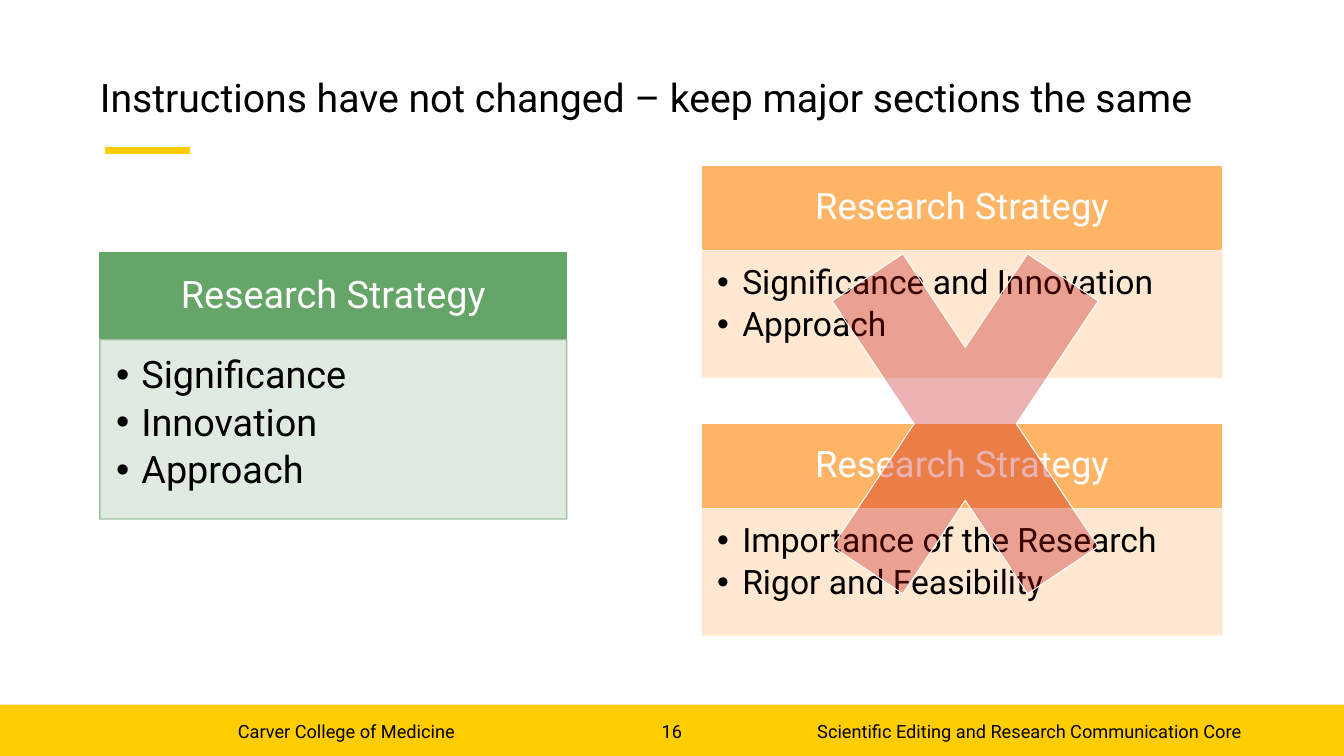
from dataclasses import dataclass

from lxml import etree
from pptx import Presentation
from pptx import util as u
from pptx.dml.color import RGBColor
from pptx.enum import shapes, text
from pptx.oxml import ns


@dataclass(frozen=True)
class Theme:
    font: str = "Roboto"
    gold: str = "FFCD00"
    ink: str = "000000"
    paper: str = "FFFFFF"
    green: str = "65A567"
    pale_green: str = "98BE9D"
    orange: str = "FFB466"
    pale_orange: str = "FFE6CC"
    red: str = "C00000"
    title: int = 28
    footer: int = 13
    head_large: int = 27
    list_large: int = 27
    head_small: int = 26
    list_small: int = 24


def apply(target, formats):
    for name, value in formats.items():
        setattr(target, name, value)


class Slide:
    def __init__(self, deck, theme, layout):
        self.theme = theme
        self.column = deck.slide_width / 100
        self.row = deck.slide_height / 100
        self.page = deck.slides.add_slide(deck.slide_layouts[layout])
        self.shapes = self.page.shapes
        self.bodies = [box for box in self.page.placeholders if box.placeholder_format.idx]

    def area(self, left, top, width, height):
        return [round(left * self.column), round(top * self.row),
                round(width * self.column), round(height * self.row)]

    def place(self, box, area):
        apply(box, dict(zip(("left", "top", "width", "height"), self.area(*area))))

    def paint(self, fill, color, opacity=100):
        fill.solid()
        fill.fore_color.rgb = RGBColor.from_string(color)
        if opacity < 100:
            tone = fill.fore_color._xFill.find(ns.qn("a:srgbClr"))
            etree.SubElement(tone, ns.qn("a:alpha"), val=str(opacity * 1000))

    def outline(self, box, color, width=1, opacity=100):
        self.paint(box.line.fill, color, opacity)
        box.line.width = u.Pt(width)

    def fill_text(self, box, lines, size, color=None, align="LEFT", anchor="MIDDLE",
                  insets=(0, 0, 0, 0), wrap=True, spacing=1.0, bullets=False):
        frame = box.text_frame
        apply(frame, {"auto_size": text.MSO_AUTO_SIZE.NONE, "word_wrap": wrap,
                      "vertical_anchor": text.MSO_ANCHOR[anchor]})
        sides = ("margin_left", "margin_top", "margin_right", "margin_bottom")
        apply(frame, {side: u.Pt(size * inset) for side, inset in zip(sides, insets)})
        for index, line in enumerate(lines):
            para = frame.add_paragraph() if index else frame.paragraphs[0]
            apply(para, {"alignment": text.PP_ALIGN[align], "line_spacing": spacing,
                         "space_before": u.Pt(0),
                         "space_after": u.Pt(size * 0.175 if bullets else 0)})
            if bullets:
                settings = para._p.get_or_add_pPr()
                settings.set("marL", str(u.Inches(0.25)))
                settings.set("indent", str(u.Inches(-0.25)))
                etree.SubElement(settings, ns.qn("a:buChar"), char="•")
            span = para.add_run()
            span.text = line
            apply(span.font, {"name": self.theme.font, "size": u.Pt(size), "bold": False})
            span.font.color.rgb = RGBColor.from_string(color or self.theme.ink)

    def title(self, area, words):
        box = self.shapes.title
        self.place(box, area)
        self.fill_text(box, [words], self.theme.title, spacing=0.9)

    def label(self, area, words, **formats):
        box = self.shapes.add_textbox(*self.area(*area))
        self.fill_text(box, [words], self.theme.footer, **formats)

    def block(self, area, color, preset="RECTANGLE", opacity=100):
        box = self.shapes.add_shape(shapes.MSO_SHAPE[preset], *self.area(*area))
        box.shadow.inherit = False
        self.paint(box.fill, color, opacity)
        box.line.fill.background()
        return box

    def rule(self, left, top, width, color, weight):
        x, y, length, _ = self.area(left, top, width, 0)
        line = self.shapes.add_connector(shapes.MSO_CONNECTOR.STRAIGHT, x, y, x + length, y)
        self.outline(line, color, weight)
        etree.SubElement(line._element.spPr, ns.qn("a:effectLst"))

    def card(self, left, top, width, heights, items, colors, sizes, opacity, edge):
        head_height, list_height = heights
        head_color, list_color = colors
        head_size, list_size = sizes
        head = self.block((left, top, width, head_height), head_color)
        self.outline(head, head_color)
        self.fill_text(head, ["Research Strategy"], head_size, self.theme.paper, "CENTER",
                       spacing=0.9)
        body = self.bodies.pop()
        self.place(body, (left, top + head_height + edge, width, list_height))
        self.paint(body.fill, list_color, opacity)
        self.outline(body, list_color, opacity=90)
        self.fill_text(body, items, list_size, anchor="TOP", insets=(0.43, 0.43, 0.56, 0.64),
                       spacing=0.9, bullets=True)

    def cross(self, area, thickness):
        box = self.block(area, self.theme.red, "MATH_MULTIPLY", 30)
        box.adjustments[0] = thickness
        self.outline(box, self.theme.paper, 0)

    def clear_unused(self):
        for box in self.bodies:
            box._element.getparent().remove(box._element)


def main():
    deck = Presentation()
    deck.slide_width, deck.slide_height = u.Inches(13.33), u.Inches(7.5)
    theme = Theme()
    slide = Slide(deck, theme, 4)

    slide.block((0, 93.2, 100, 6.8), theme.gold)
    slide.rule(7.8, 19.87, 6.3, theme.gold, 5)
    slide.label((47.55, 95.33, 4.88, 3.47), "16", align="CENTER", anchor="TOP")
    slide.label((17.7, 95.33, 23.7, 4.67), "Carver College of Medicine", anchor="TOP", wrap=False)
    slide.title((7.43, 6.67, 83.48, 13.07),
                "Instructions have not changed – keep major sections the same")

    slide.card(7.43, 33.47, 34.73, (11.33, 23.73), ["Significance", "Innovation", "Approach"],
               (theme.green, theme.pale_green), (theme.head_large, theme.list_large), 30, 0.13)
    alternatives = [["Significance and Innovation", "Approach"],
                    ["Importance of the Research", "Rigor and Feasibility"]]
    for index, items in enumerate(alternatives):
        slide.card(52.28, 22 + index * 34.13, 38.63, (10.93, 16.67), items,
                   (theme.orange, theme.pale_orange),
                   (theme.head_small, theme.list_small), 90, 0.27)

    slide.cross((57.83, 18.8, 27.98, 74.53), 0.226)
    slide.label((53.93, 94, 38.4, 5.33), "Scientific Editing and Research Communication Core",
                align="RIGHT")
    slide.clear_unused()
    deck.save("out.pptx")


if __name__ == "__main__":
    main()
